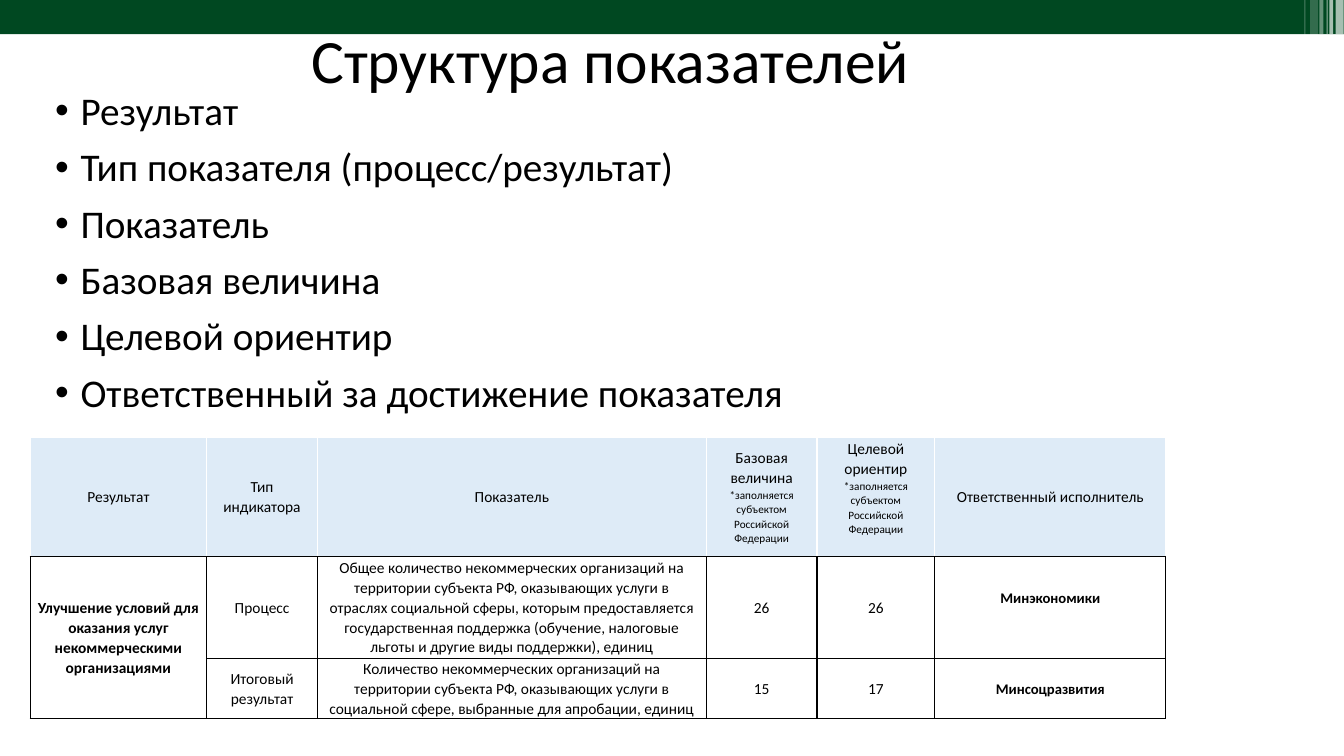
from dataclasses import dataclass

import pptx
import pptx.dml.color
import pptx.enum.shapes
import pptx.enum.text
import pptx.oxml
import pptx.oxml.ns
import pptx.util
from lxml import etree

Cm = pptx.util.Cm
Pt = pptx.util.Pt
RGBColor = pptx.dml.color.RGBColor
PP_ALIGN = pptx.enum.text.PP_ALIGN
MSO_ANCHOR = pptx.enum.text.MSO_ANCHOR
qn = pptx.oxml.ns.qn

FONT = "Calibri"
BLACK = RGBColor(0x00, 0x00, 0x00)
WHITE = RGBColor(0xFF, 0xFF, 0xFF)
GREEN = RGBColor(0x00, 0x48, 0x21)
PALE_BLUE = RGBColor(0xDE, 0xEB, 0xF7)


@dataclass
class Band:
    left: float
    width: float
    height: float
    color: RGBColor = WHITE
    opacity: int = 100


@dataclass
class Entry:
    text: str
    note: str = ""
    size: float = 11
    bold: bool = False
    bottom: float = 0


BANDS = [
    Band(0, 33.87, 0.86, GREEN),
    Band(33.66, 0.2, 0.86, opacity=65),
    Band(33.5, 0.1, 0.86, opacity=65),
    Band(33.43, 0.03, 0.86, opacity=60),
    Band(33.25, 0.1, 0.86, opacity=40),
    Band(33.02, 0.2, 0.91, opacity=20),
    Band(32.87, 0.03, 0.91, opacity=30),
]
POINTS = [
    "Результат",
    "Тип показателя (процесс/результат)",
    "Показатель",
    "Базовая величина",
    "Целевой ориентир",
    "Ответственный за достижение показателя",
]
COLUMNS = [4.45, 2.79, 9.8, 2.79, 2.97, 5.82]
ROWS = [3, 2.57, 1.52]
NOTE = "*заполняется субъектом Российской Федерации"
ENTRIES = [
    [
        Entry("Результат"),
        Entry("Тип индикатора"),
        Entry("Показатель"),
        Entry("Базовая величина", NOTE),
        Entry("Целевой ориентир", NOTE, bottom=0.45),
        Entry("Ответственный исполнитель"),
    ],
    [
        Entry("Улучшение условий для оказания услуг некоммерческими организациями",
              bold=True),
        Entry("Процесс"),
        Entry("Общее количество некоммерческих организаций на территории субъекта РФ, "
              "оказывающих услуги в отраслях социальной сферы, которым предоставляется "
              "государственная поддержка (обучение, налоговые льготы и другие виды "
              "поддержки), единиц"),
        Entry("26"),
        Entry("26"),
        Entry("Минэкономики", size=10.5, bold=True, bottom=0.45),
    ],
    [
        Entry(""),
        Entry("Итоговый результат"),
        Entry("Количество некоммерческих организаций на территории субъекта РФ, "
              "оказывающих услуги в социальной сфере, выбранные для апробации, единиц"),
        Entry("15"),
        Entry("17"),
        Entry("Минсоцразвития", size=10.5, bold=True),
    ],
]


def format_runs(p, size: float, bold: bool = False) -> None:
    for r in p.runs:
        r.font.name = FONT
        r.font.size = Pt(size)
        r.font.bold = bold
        r.font.color.rgb = BLACK


def add_band(s, band: Band) -> None:
    sp = s.shapes.add_shape(pptx.enum.shapes.MSO_SHAPE.RECTANGLE,
                            Cm(band.left), 0, Cm(band.width), Cm(band.height))
    sp.shadow.inherit = False
    sp.line.fill.background()
    sp.fill.solid()
    sp.fill.fore_color.rgb = band.color
    if band.opacity < 100:
        color = sp.fill._xPr.find(qn("a:solidFill")).find(qn("a:srgbClr"))
        etree.SubElement(color, qn("a:alpha"), val=str(band.opacity * 1000))


def set_title(s, text: str) -> None:
    sp = s.shapes.title
    sp.left, sp.top, sp.width, sp.height = Cm(7.59), Cm(-0.23), Cm(29.21), Cm(3.68)
    tf = sp.text_frame
    tf.text = text
    tf.vertical_anchor = MSO_ANCHOR.MIDDLE
    p = tf.paragraphs[0]
    p.alignment = PP_ALIGN.LEFT
    p.line_spacing = 0.9
    format_runs(p, 44)


def add_points(s, points: list[str]) -> None:
    tf = s.shapes.add_textbox(Cm(1.14), Cm(2.18), Cm(23.88), Cm(10.77)).text_frame
    tf.word_wrap = True
    tf.text = "\n".join(points)
    for p in tf.paragraphs:
        p.line_spacing = 0.9
        p.space_before = Pt(10)
        format_runs(p, 28)
        pPr = p._p.get_or_add_pPr()
        pPr.set("marL", str(Cm(0.64)))
        pPr.set("indent", str(Cm(-0.64)))
        etree.SubElement(pPr, qn("a:buFont"), typeface="Arial")
        etree.SubElement(pPr, qn("a:buChar"), char="•")


def set_borders(cell, sides: dict[str, RGBColor]) -> None:
    """Draw 1 pt borders; sides maps L, R, T and B, in that order, to colours."""
    tcPr = cell._tc.get_or_add_tcPr()
    for side, color in sides.items():
        ln = etree.SubElement(tcPr, qn(f"a:ln{side}"), w=str(Pt(1)))
        fill = etree.SubElement(ln, qn("a:solidFill"))
        etree.SubElement(fill, qn("a:srgbClr"), val=str(color))


def fill_cell(cell, entry: Entry, header: bool) -> None:
    side = WHITE if header else BLACK
    set_borders(cell, {"L": side, "R": side, "T": side, "B": BLACK})
    if header:
        cell.fill.solid()
        cell.fill.fore_color.rgb = PALE_BLUE
    else:
        cell.fill.background()
    cell.margin_left = cell.margin_right = Cm(0.18)
    cell.margin_top, cell.margin_bottom = 0, Cm(entry.bottom)
    cell.vertical_anchor = MSO_ANCHOR.MIDDLE
    tf = cell.text_frame
    tf.text = entry.text
    format_runs(tf.paragraphs[0], entry.size, entry.bold)
    if entry.note:
        p = tf.add_paragraph()
        p.text = entry.note
        format_runs(p, 8)
    for p in tf.paragraphs:
        p.alignment = PP_ALIGN.CENTER
        p.line_spacing = 1.05


def add_indicators(s) -> None:
    table = s.shapes.add_table(len(ROWS), len(COLUMNS), Cm(0.76), Cm(11.02),
                               Cm(sum(COLUMNS)), Cm(sum(ROWS))).table
    table.first_row = table.horz_banding = False
    for column, width in zip(table.columns, COLUMNS):
        column.width = Cm(width)
    for i, (row, height) in enumerate(zip(table.rows, ROWS)):
        row.height = Cm(height)
        for cell, entry in zip(row.cells, ENTRIES[i]):
            fill_cell(cell, entry, header=i == 0)
    table.cell(1, 0).merge(table.cell(2, 0))


def main() -> None:
    prs = pptx.Presentation()
    prs.slide_width, prs.slide_height = Cm(33.87), Cm(19.05)
    s = prs.slides.add_slide(prs.slide_layouts.get_by_name("Title Only"))
    for band in BANDS:
        add_band(s, band)
    set_title(s, "Структура показателей")
    add_points(s, POINTS)
    add_indicators(s)
    prs.save("out.pptx")


if __name__ == "__main__":
    main()
